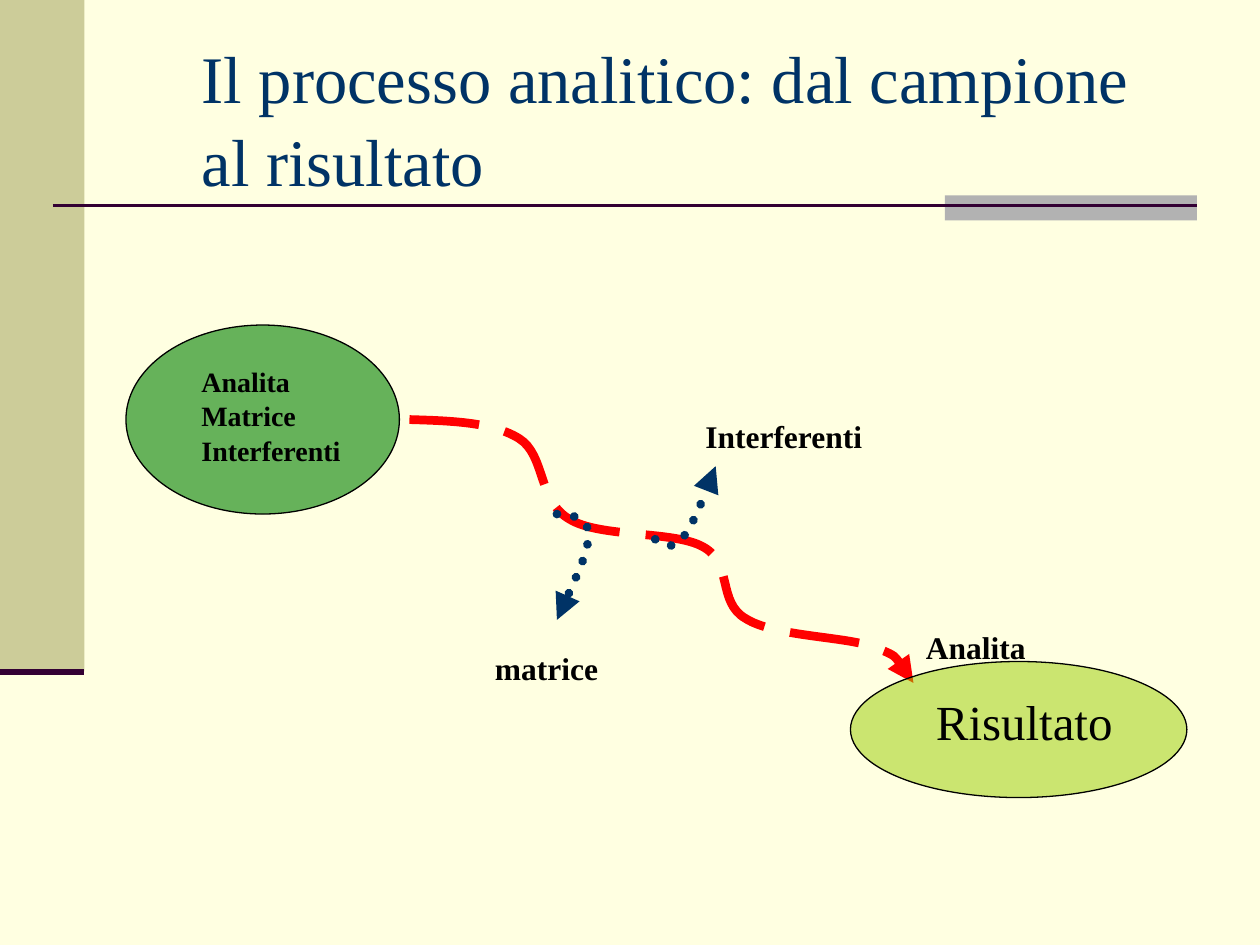
from lxml.etree import SubElement
from pptx import Presentation
from pptx.dml.color import RGBColor
from pptx.enum.dml import MSO_LINE as Dash
from pptx.enum.shapes import MSO_CONNECTOR as Link, MSO_SHAPE as Kind
from pptx.enum.text import MSO_ANCHOR as Anchor, MSO_AUTO_SIZE as Fit, PP_ALIGN as Align
from pptx.oxml.ns import qn
from pptx.util import Inches, Pt

CREAM = RGBColor(0xFF, 0xFF, 0xE1)
SAND = RGBColor(0xCC, 0xCC, 0x99)
GREY = RGBColor(0xB2, 0xB2, 0xB2)
PLUM = RGBColor(0x33, 0x00, 0x33)
GREEN = RGBColor(0x00, 0x80, 0x00)
LIME = RGBColor(0x99, 0xCC, 0x00)
NAVY = RGBColor(0x00, 0x33, 0x66)
RED = RGBColor(0xFF, 0x00, 0x00)
BLACK = RGBColor(0x00, 0x00, 0x00)

TITLE = "Il processo analitico: dal campione\val risultato"
BARS = [((0, 0, 0.67, 5.33), SAND), ((7.5, 1.55, 2, 0.2), GREY)]
RULES = [((0.42, 1.63, 9.5, 1.63), 1.5), ((0, 5.33, 0.67, 5.33), 3.5)]
# box, fill, opacity in percent
SAMPLE = ((1, 2.58, 2.17, 1.5), GREEN, 60)
RESULT = ((6.75, 5.25, 2.67, 1.08), LIME, 50)
# start point, then two handles and an end point for each bend
PATH = [(3.25, 3.33),
        (3.58, 3.34), (3.91, 3.35), (4.12, 3.48),
        (4.33, 3.61), (4.27, 3.98), (4.52, 4.12),
        (4.76, 4.27), (5.35, 4.21), (5.58, 4.34),
        (5.82, 4.47), (5.69, 4.78), (5.92, 4.91),
        (6.14, 5.05), (6.69, 5.05), (6.92, 5.13),
        (7.14, 5.21), (7.19, 5.31), (7.25, 5.42)]
EXITS = [
    [(4.42, 4.08), (4.54, 4.09), (4.67, 4.1), (4.67, 4.24),
     (4.67, 4.38), (4.54, 4.65), (4.42, 4.92)],
    [(5.2, 4.28), (5.26, 4.32), (5.33, 4.37), (5.41, 4.28),
     (5.49, 4.18), (5.59, 3.94), (5.68, 3.7)],
]
# lines, box, size, bold
LABELS = [
    (["Analita", "Matrice", "Interferenti"], (1.5, 2.83, 1.32, 0.9), 16, True),
    (["Risultato"], (7.33, 5.42, 1.6, 0.57), 28, False),
    (["matrice"], (3.83, 5.09, 1.02, 0.4), 18, True),
    (["Interferenti"], (5.5, 3.25, 1.45, 0.4), 18, True),
    (["Analita"], (7.25, 4.92, 0.99, 0.4), 18, True),
]


def inches(vals):
    return [Inches(v) for v in vals]


def style(para, size, color, bold=False):
    para.alignment = Align.LEFT
    para.line_spacing = 1.04
    look = {"name": "Times New Roman", "size": Pt(size), "bold": bold}
    for key, val in look.items():
        setattr(para.font, key, val)
    para.font.color.rgb = color


def add_fill(shapes, kind, box, color):
    shape = shapes.add_shape(kind, *inches(box))
    shape.shadow.inherit = False
    shape.fill.solid()
    shape.fill.fore_color.rgb = color
    shape.line.fill.background()
    return shape


def add_oval(shapes, box, color, alpha):
    oval = add_fill(shapes, Kind.OVAL, box, color)
    tint = oval.fill._xPr.find(".//" + qn("a:srgbClr"))
    SubElement(tint, qn("a:alpha"), val=str(alpha * 1000))
    oval.line.color.rgb = BLACK
    oval.line.width = Pt(0.75)


def add_rule(shapes, ends, width):
    rule = shapes.add_connector(Link.STRAIGHT, *inches(ends))
    rule.line.color.rgb = PLUM
    rule.line.width = Pt(width)
    SubElement(rule._element.spPr, qn("a:effectLst"))


def add_curve(shapes, pts, color, dash, cap):
    """Draw a dashed arrow, turning each three straight steps into one bend."""
    start, *rest = [inches(pt) for pt in pts]
    pen = shapes.build_freeform(*start)
    pen.add_line_segments(rest, close=False)
    curve = pen.convert_to_shape()
    curve.shadow.inherit = False
    curve.fill.background()
    line = curve.line
    line.color.rgb = color
    line.width = Pt(5)
    line.dash_style = dash
    ln = line._get_or_add_ln()
    ln.set("cap", cap)
    SubElement(ln, qn("a:tailEnd"), type="triangle")
    route = curve._element.find(".//" + qn("a:path"))
    steps = route.findall(qn("a:lnTo"))
    for i in range(0, len(steps), 3):
        bend = SubElement(route, qn("a:cubicBezTo"))
        for step in steps[i:i + 3]:
            bend.append(step[0])
            route.remove(step)


def add_label(shapes, lines, box, size, bold):
    frame = shapes.add_textbox(*inches(box)).text_frame
    frame.word_wrap = False
    frame.auto_size = Fit.SHAPE_TO_FIT_TEXT
    frame.text = "\n".join(lines)
    for para in frame.paragraphs:
        style(para, size, BLACK, bold)


def main():
    prs = Presentation()
    prs.slide_width, prs.slide_height = inches((10, 7.5))
    slide = prs.slides.add_slide(prs.slide_layouts[5])
    back = slide.background.fill
    back.solid()
    back.fore_color.rgb = CREAM
    shapes = slide.shapes

    title = shapes.title
    title.left, title.top, title.width, title.height = inches((1.5, 0.3, 8.5, 1.25))
    frame = title.text_frame
    frame.text = TITLE
    frame.auto_size = Fit.NONE
    frame.vertical_anchor = Anchor.MIDDLE
    style(frame.paragraphs[0], 38, NAVY)

    for box, color in BARS:
        add_fill(shapes, Kind.RECTANGLE, box, color)
    for ends, width in RULES:
        add_rule(shapes, ends, width)
    add_oval(shapes, *SAMPLE)
    add_curve(shapes, PATH, RED, Dash.LONG_DASH, "flat")
    add_oval(shapes, *RESULT)
    for pts in EXITS:
        add_curve(shapes, pts, NAVY, Dash.ROUND_DOT, "rnd")
    for label in LABELS:
        add_label(shapes, *label)
    prs.save("out.pptx")


if __name__ == "__main__":
    main()
